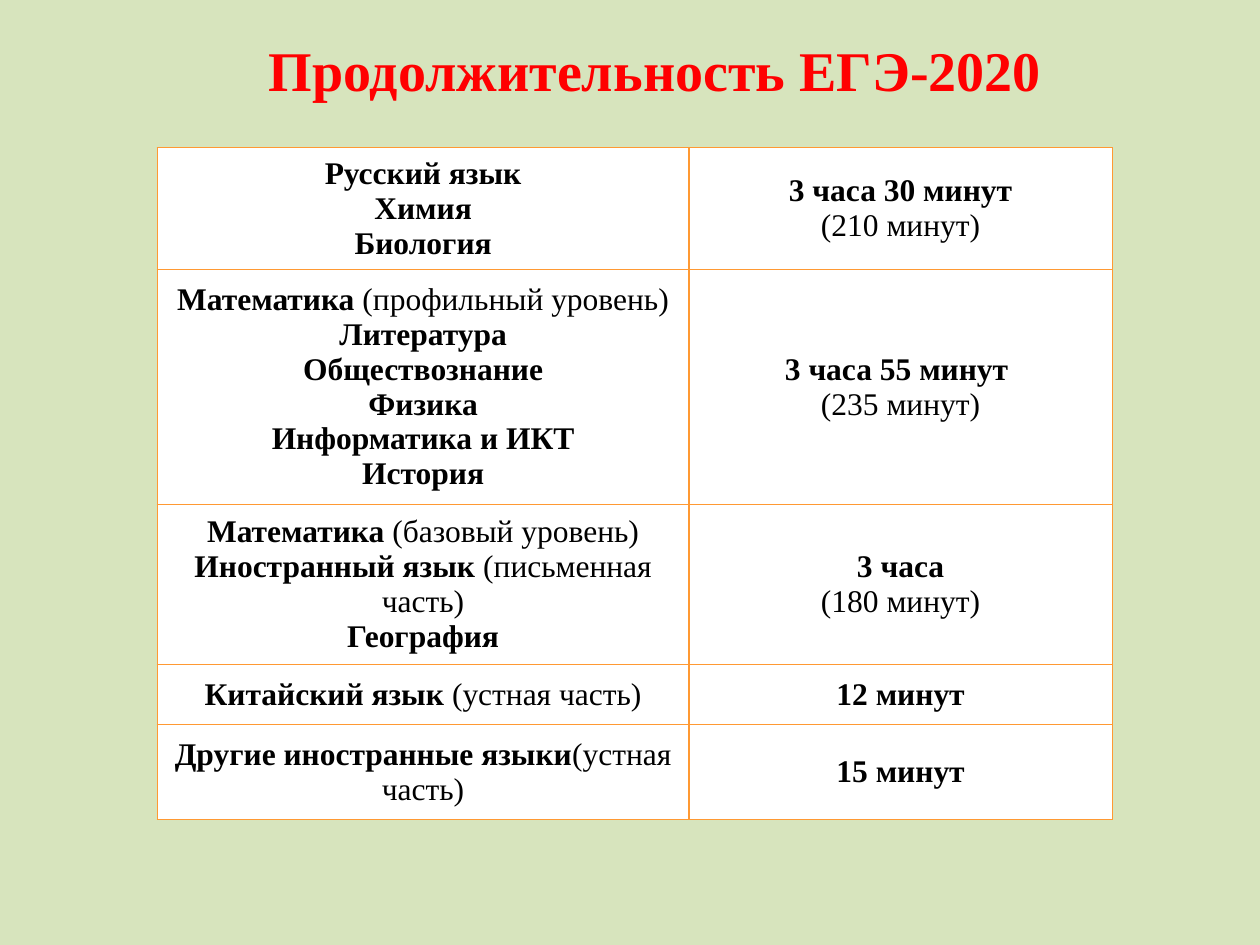
from dataclasses import dataclass

from lxml.etree import SubElement
from pptx import Presentation
from pptx.dml.color import RGBColor
from pptx.enum.text import MSO_ANCHOR, MSO_AUTO_SIZE, PP_ALIGN
from pptx.oxml.ns import qn
from pptx.util import Cm, Pt


@dataclass(frozen=True)
class Theme:
    font: str = "Times New Roman"
    background: str = "D7E4BD"
    heading: str = "FF0000"
    body: str = "000000"
    cell: str = "FFFFFF"
    border: str = "FF9933"
    heading_size: int = 32
    body_size: int = 18
    border_width: float = 0.75


def apply(target, formats):
    for name, value in formats.items():
        setattr(target, name, value)


class SlideBuilder:
    def __init__(self, slide, theme):
        self.slide = slide
        self.theme = theme

    def background(self):
        fill = self.slide.background.fill
        fill.solid()
        fill.fore_color.rgb = RGBColor.from_string(self.theme.background)

    def run(self, paragraph, text, size, color, bold):
        run = paragraph.add_run()
        run.text = text
        apply(run.font, {"name": self.theme.font, "size": Pt(size), "bold": bold})
        run.font.color.rgb = RGBColor.from_string(color)

    def title(self, text, left, top, width, height):
        heading = self.slide.shapes.title
        apply(heading, {"left": Cm(left), "top": Cm(top),
                        "width": Cm(width), "height": Cm(height)})
        frame = heading.text_frame
        apply(frame, {"word_wrap": False, "auto_size": MSO_AUTO_SIZE.SHAPE_TO_FIT_TEXT,
                      "vertical_anchor": MSO_ANCHOR.TOP})
        paragraph = frame.paragraphs[0]
        paragraph.alignment = PP_ALIGN.LEFT
        self.run(paragraph, text, self.theme.heading_size, self.theme.heading, True)

    def borders(self, cell):
        properties = cell._tc.get_or_add_tcPr()
        for side in ("a:lnL", "a:lnR", "a:lnT", "a:lnB"):
            line = SubElement(properties, qn(side), w=str(Pt(self.theme.border_width)))
            fill = SubElement(line, qn("a:solidFill"))
            SubElement(fill, qn("a:srgbClr"), val=self.theme.border)

    def cell(self, cell, lines):
        margins = ("margin_left", "margin_right", "margin_top", "margin_bottom")
        apply(cell, {"vertical_anchor": MSO_ANCHOR.MIDDLE,
                     **dict.fromkeys(margins, Cm(0.08))})
        self.borders(cell)
        cell.fill.solid()
        cell.fill.fore_color.rgb = RGBColor.from_string(self.theme.cell)
        paragraph = cell.text_frame.paragraphs[0]
        paragraph.alignment = PP_ALIGN.CENTER
        for index, (strong, plain) in enumerate(lines):
            if index:
                paragraph.add_line_break()
            for text, bold in ((strong, True), (plain, False)):
                if text:
                    self.run(paragraph, text, self.theme.body_size, self.theme.body, bold)

    def table(self, rows, left, top, widths, heights):
        table = self.slide.shapes.add_table(
            len(rows), len(widths), Cm(left), Cm(top),
            Cm(sum(widths)), Cm(sum(heights))).table
        apply(table, {"first_row": False, "horz_banding": False})
        for column, width in zip(table.columns, widths):
            column.width = Cm(width)
        for row, height, contents in zip(table.rows, heights, rows):
            row.height = Cm(height)
            for cell, lines in zip(row.cells, contents):
                self.cell(cell, lines)


EXAM_DURATIONS = [
    ([("Русский язык", ""), ("Химия", ""), ("Биология", "")],
     [("3 часа 30 минут", ""), ("", "(210 минут)")]),
    ([("Математика ", "(профильный уровень)"), ("Литература", ""),
      ("Обществознание", ""), ("Физика", ""), ("Информатика и ИКТ", ""),
      ("История", "")],
     [("3 часа 55 минут ", ""), ("", "(235 минут)")]),
    ([("Математика ", "(базовый уровень)"),
      ("Иностранный язык ", "(письменная часть)"), ("География", "")],
     [("3 часа", ""), ("", "(180 минут)")]),
    ([("Китайский язык", " (устная часть)")], [("12 минут", "")]),
    ([("Другие иностранные языки", "(устная часть)")], [("15 минут", "")]),
]


def main():
    presentation = Presentation()
    apply(presentation, {"slide_width": Cm(25.4), "slide_height": Cm(19.05)})
    slide = presentation.slides.add_slide(presentation.slide_layouts[5])
    builder = SlideBuilder(slide, Theme())
    builder.background()
    builder.title("Продолжительность ЕГЭ-2020", 5.16, 0.58, 16.26, 1.63)
    builder.table(EXAM_DURATIONS, 3.17, 2.98, (10.72, 8.53),
                  (2.45, 4.74, 3.23, 1.21, 1.91))
    presentation.save("out.pptx")


if __name__ == "__main__":
    main()
